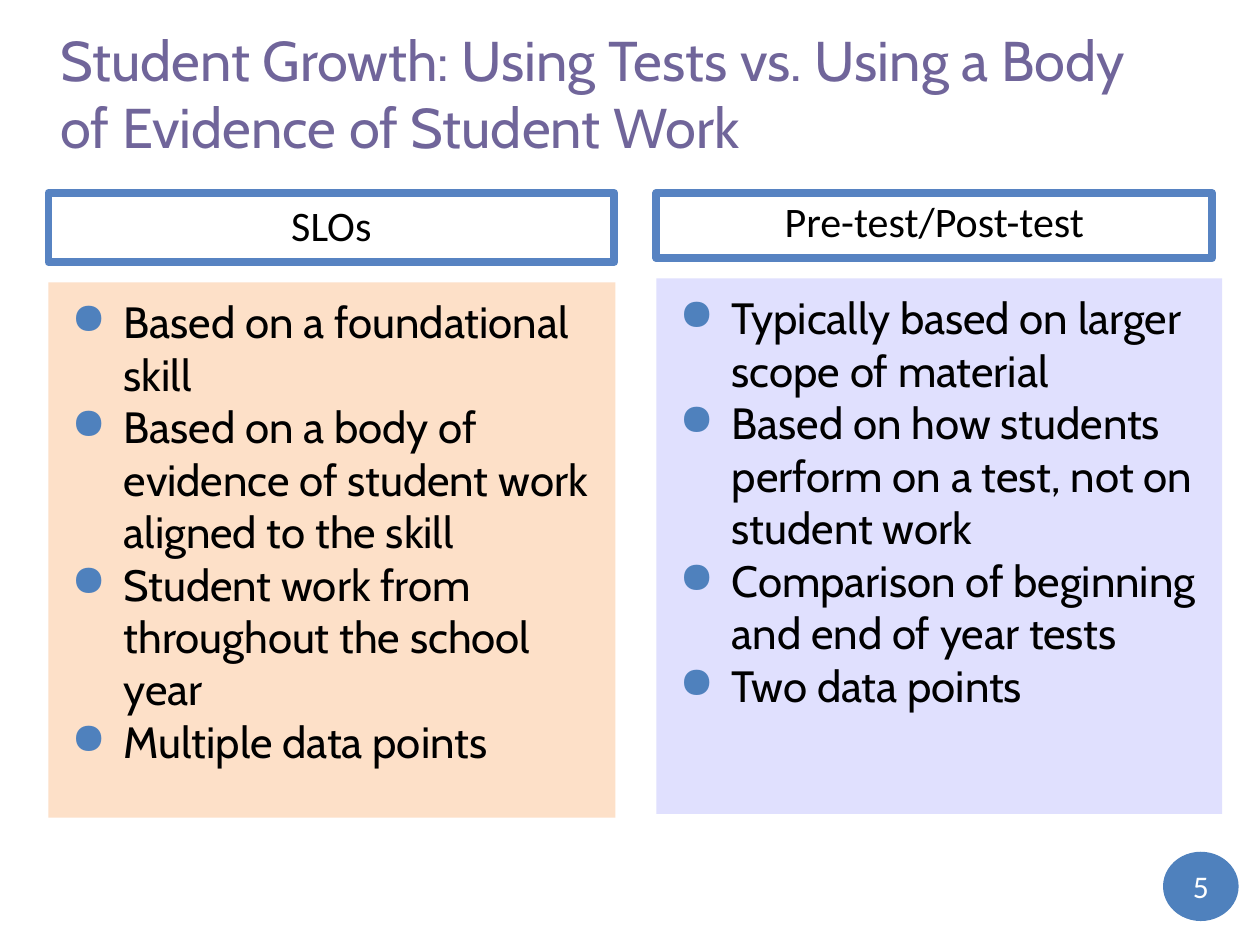
import pptx
import pptx.dml.color
import pptx.enum.shapes
import pptx.enum.text
import pptx.oxml
import pptx.oxml.ns
import pptx.util

Pt = pptx.util.Pt
RGBColor = pptx.dml.color.RGBColor
SHAPE = pptx.enum.shapes.MSO_SHAPE
ANCHOR = pptx.enum.text.MSO_ANCHOR
ALIGN = pptx.enum.text.PP_ALIGN

PURPLE = RGBColor(0x70, 0x65, 0x9A)
BORDER_BLUE = RGBColor(0x57, 0x83, 0xC2)
BLUE = RGBColor(0x4F, 0x81, 0xBD)
PEACH = RGBColor(0xFD, 0xE0, 0xC8)
LAVENDER = RGBColor(0xE0, 0xE0, 0xFE)
BLACK = RGBColor(0, 0, 0)
WHITE = RGBColor(0xFF, 0xFF, 0xFF)

SLO_POINTS = [
    "Based on a foundational skill",
    "Based on a body of evidence of student work aligned to the skill",
    "Student work from throughout the school year",
    "Multiple data points",
]
TEST_POINTS = [
    "Typically based on larger scope of material",
    "Based on how students perform on a test, not on student work",
    "Comparison of beginning and end of year tests",
    "Two data points",
]


def set_text(box, lines, font, size, color, align, anchor, inset=7.2):
    """Fill a box with one paragraph per line in a single style."""
    frame = box.text_frame
    frame.word_wrap = True
    frame.vertical_anchor = anchor
    frame.margin_left = frame.margin_right = Pt(inset)
    frame.margin_top = frame.margin_bottom = Pt(inset)
    frame.text = "\n".join(lines)
    for para in frame.paragraphs:
        para.alignment = align
        for span in para.runs:
            span.font.name = font
            span.font.size = Pt(size)
            span.font.color.rgb = color


def add_block(page, kind, area, fill=None, line=None):
    """Add a preset shape with an optional fill and an optional thick outline."""
    block = page.shapes.add_shape(kind, *(Pt(length) for length in area))
    block.shadow.inherit = False
    if fill is None:
        block.fill.background()
    else:
        block.fill.solid()
        block.fill.fore_color.rgb = fill
    if line is None:
        block.line.fill.background()
    else:
        block.line.color.rgb = line
        block.line.width = Pt(4.5)
    return block


def add_bullet(para):
    """Give a paragraph a blue round bullet with a hanging indent."""
    properties = para._p.get_or_add_pPr()
    properties.set("marL", str(Pt(36)))
    properties.set("indent", str(Pt(-30)))
    namespace = pptx.oxml.ns.nsdecls("a")
    for element in (
        f'<a:buClr {namespace}><a:srgbClr val="{BLUE}"/></a:buClr>',
        f'<a:buChar {namespace} char="●"/>',
    ):
        properties.append(pptx.oxml.parse_xml(element))


def add_title(page, area, text):
    """Add the slide heading."""
    box = page.shapes.add_textbox(*(Pt(length) for length in area))
    set_text(box, [text], "Cabin", 32, PURPLE, ALIGN.LEFT, ANCHOR.BOTTOM)


def add_column(page, area, heading, heading_size, points, fill):
    """Add an outlined heading at the top of the area and a bullet panel at its foot."""
    left, top, width, height = area
    panel_height = 306
    header = add_block(page, SHAPE.RECTANGLE, (left, top, *heading_size), line=BORDER_BLUE)
    set_text(header, [heading], "Calibri", 24, BLACK, ALIGN.CENTER, ANCHOR.BOTTOM)
    panel_top = top + height - panel_height
    panel = add_block(page, SHAPE.RECTANGLE, (left, panel_top, width, panel_height), fill)
    set_text(panel, points, "Cabin", 25, BLACK, ALIGN.LEFT, ANCHOR.TOP)
    for para in panel.text_frame.paragraphs:
        add_bullet(para)


def add_page_number(page, area, number):
    """Add the round page number badge."""
    badge = add_block(page, SHAPE.OVAL, area, BLUE)
    set_text(badge, [number], "Calibri", 18, WHITE, ALIGN.CENTER, ANCHOR.MIDDLE, 0)


def main():
    """Build the slide and save it."""
    deck = pptx.Presentation()
    deck.slide_width, deck.slide_height = Pt(720), Pt(540)
    page = deck.slides.add_slide(deck.slide_layouts[6])
    add_title(page, (27.4, 10, 656.6, 88.6),
              "Student Growth: Using Tests vs. Using a Body of Evidence of Student Work")
    add_column(page, (27.7, 110.2, 324, 357.1), "SLOs", (323.3, 39.6), SLO_POINTS, PEACH)
    add_column(page, (375.1, 110.2, 323.3, 354.9), "Pre-test/Post-test", (317.5, 37.4),
               TEST_POINTS, LAVENDER)
    add_page_number(page, (664.6, 486.7, 43.2, 39.6), "5")
    deck.save("out.pptx")


if __name__ == "__main__":
    main()
